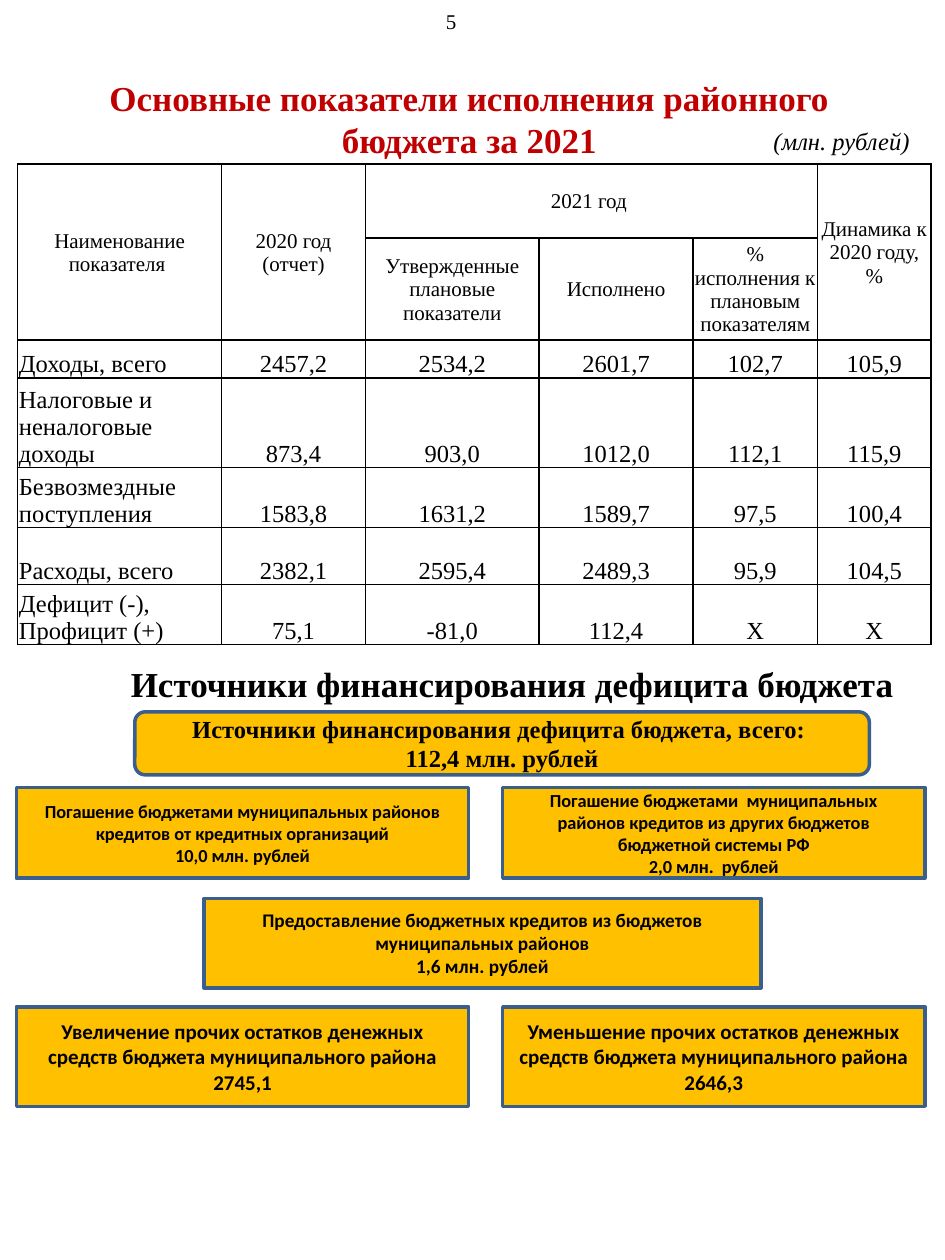
from dataclasses import dataclass
from typing import Any

from lxml.etree import SubElement
from pptx import Presentation
from pptx.dml.color import RGBColor
from pptx.enum.shapes import MSO_SHAPE as Shape
from pptx.enum.text import MSO_ANCHOR as Anchor, MSO_AUTO_SIZE as AutoSize, PP_ALIGN as Align
from pptx.oxml.ns import qn
from pptx.util import Inches, Pt

SERIF, SANS = "Times New Roman", "Calibri"
COLUMN, ROW = Inches(0.075), Inches(0.1)  # a grid of 100 by 100

HEADINGS = {
    (0, 0, 1, 0): "Наименование показателя ",
    (0, 1, 1, 1): "2020 год (отчет)",
    (0, 2, 0, 4): "2021 год ",
    (0, 5, 1, 5): "Динамика к 2020 году, %",
    (1, 2, 1, 2): "Утвержденные плановые показатели",
    (1, 3, 1, 3): "Исполнено",
    (1, 4, 1, 4): "% исполнения к плановым показателям",
}
INDICATORS = [
    ("Доходы, всего", "2457,2", "2534,2", "2601,7", "102,7", "105,9"),
    ("Налоговые и неналоговые доходы", "873,4", "903,0", "1012,0", "112,1", "115,9"),
    ("Безвозмездные поступления", "1583,8", "1631,2", "1589,7", "97,5", "100,4"),
    ("Расходы, всего", "2382,1", "2595,4", "2489,3", "95,9", "104,5"),
    ("Дефицит (-),\nПрофицит (+)", "75,1", "-81,0", "112,4", "Х", "Х"),
]
COLUMN_SHARES = [21.6, 15.2, 18.4, 16.27, 13.2, 12]
ROW_SHARES = [5.9, 7.6, 3, 6.7, 4.5, 4.5, 4.5]

LEFT, RIGHT = (1.73, 47.87), (53.2, 44.67)  # left edge and width in columns
MIDDLE = (21.6, 58.93)
UPPER, CENTRAL, LOWER = (62.5, 7.2), (71.3, 7.1), (79.9, 7.9)  # top and height in rows
SOURCES = [
    (LEFT, UPPER, 10.5, "Погашение бюджетами муниципальных районов кредитов "
     "от кредитных организаций\n10,0 млн. рублей"),
    (RIGHT, UPPER, 10.5, "Погашение бюджетами  муниципальных районов кредитов "
     "из других бюджетов бюджетной системы РФ\n2,0 млн.  рублей"),
    (MIDDLE, CENTRAL, 11, "Предоставление бюджетных кредитов из бюджетов "
     "муниципальных районов\n1,6 млн. рублей"),
    (LEFT, LOWER, 12, "Увеличение прочих остатков денежных средств бюджета "
     "муниципального района\n2745,1"),
    (RIGHT, LOWER, 12, "Уменьшение прочих остатков денежных средств бюджета "
     "муниципального района\n2646,3"),
]


def color(value):
    return RGBColor.from_string(value)


def write(frame, text, size=12, font=SERIF, ink="000000", bold=False, italic=False,
          align=Align.LEFT):
    for index, line in enumerate(text.split("\n")):
        paragraph = frame.add_paragraph() if index else frame.paragraphs[0]
        paragraph.alignment = align
        run = paragraph.add_run()
        run.text = line
        run.font.name, run.font.size = font, Pt(size)
        run.font.bold, run.font.italic = bold, italic
        run.font.color.rgb = color(ink)


def place(left, top, width, height):
    return [round(left * COLUMN), round(top * ROW), round(width * COLUMN), round(height * ROW)]


@dataclass
class Page:
    slide: Any
    fill: str = "FFC000"
    outline: str = "3A5F8C"
    title_ink: str = "C00000"
    rule: str = "000000"

    def title(self, text, *area):
        heading = self.slide.shapes.title
        heading.left, heading.top, heading.width, heading.height = place(*area)
        frame = heading.text_frame
        frame.word_wrap = True
        frame.auto_size = AutoSize.NONE
        frame.vertical_anchor = Anchor.TOP
        write(frame, text, size=20, bold=True, ink=self.title_ink, align=Align.CENTER)

    def label(self, text, *area, **style):
        frame = self.slide.shapes.add_textbox(*place(*area)).text_frame
        frame.word_wrap = False
        frame.auto_size = AutoSize.SHAPE_TO_FIT_TEXT
        write(frame, text, **style)

    def box(self, text, *area, kind=Shape.RECTANGLE, **style):
        box = self.slide.shapes.add_shape(kind, *place(*area))
        box.shadow.inherit = False
        box.fill.solid()
        box.fill.fore_color.rgb = color(self.fill)
        box.line.color.rgb = color(self.outline)
        box.line.width = Pt(2)
        box.text_frame.word_wrap = True
        box.text_frame.vertical_anchor = Anchor.MIDDLE
        write(box.text_frame, text, bold=True, align=Align.CENTER, **style)

    def format_cell(self, cell):
        """Draw the four borders, clear the fill and tighten the margins."""
        properties = cell._tc.get_or_add_tcPr()
        for side in ("a:lnL", "a:lnR", "a:lnT", "a:lnB"):
            border = SubElement(properties, qn(side), w=str(Pt(1)))
            paint = SubElement(border, qn("a:solidFill"))
            SubElement(paint, qn("a:srgbClr"), val=self.rule)
        cell.fill.background()
        cell.margin_left = cell.margin_right = cell.margin_top = Inches(0.01)
        cell.margin_bottom = 0

    def table(self, left, top):
        area = place(left, top, sum(COLUMN_SHARES), sum(ROW_SHARES))
        table = self.slide.shapes.add_table(len(ROW_SHARES), len(COLUMN_SHARES), *area).table
        table.first_row = table.horz_banding = False
        for column, share in zip(table.columns, COLUMN_SHARES):
            column.width = round(share * COLUMN)
        for row, share in zip(table.rows, ROW_SHARES):
            row.height = round(share * ROW)
        for cell in table.iter_cells():
            self.format_cell(cell)
        for (row, column, last_row, last_column), heading in HEADINGS.items():
            cell = table.cell(row, column)
            if (row, column) != (last_row, last_column):
                cell.merge(table.cell(last_row, last_column))
            cell.vertical_anchor = Anchor.MIDDLE
            write(cell.text_frame, heading, align=Align.CENTER)
        for row, values in enumerate(INDICATORS, start=2):
            for column, value in enumerate(values):
                cell = table.cell(row, column)
                cell.vertical_anchor = Anchor.BOTTOM
                write(cell.text_frame, value, size=14,
                      align=Align.CENTER if column else Align.LEFT)


def main():
    deck = Presentation()
    deck.slide_width, deck.slide_height = 100 * COLUMN, 100 * ROW
    page = Page(deck.slides.add_slide(deck.slide_layouts[5]))
    page.label("5", 45.87, 0.2, 3.87, 3)
    page.title("Основные показатели исполнения районного бюджета за 2021",
               2.93, 5.6, 93.47, 7.7)
    page.table(1.87, 13)
    page.label("(млн. рублей)", 80.53, 9.5, 17.2, 3.4, size=14, italic=True)
    page.label("Источники финансирования дефицита бюджета", 12.53, 52.1, 84, 4.4,
               size=20, bold=True)
    page.box("Источники финансирования дефицита бюджета, всего: \n112,4 млн. рублей",
             14.27, 56.5, 77.73, 5, kind=Shape.ROUNDED_RECTANGLE, size=14)
    for (left, width), (top, height), size, source in SOURCES:
        page.box(source, left, top, width, height, size=size, font=SANS)
    deck.save("out.pptx")


if __name__ == "__main__":
    main()
